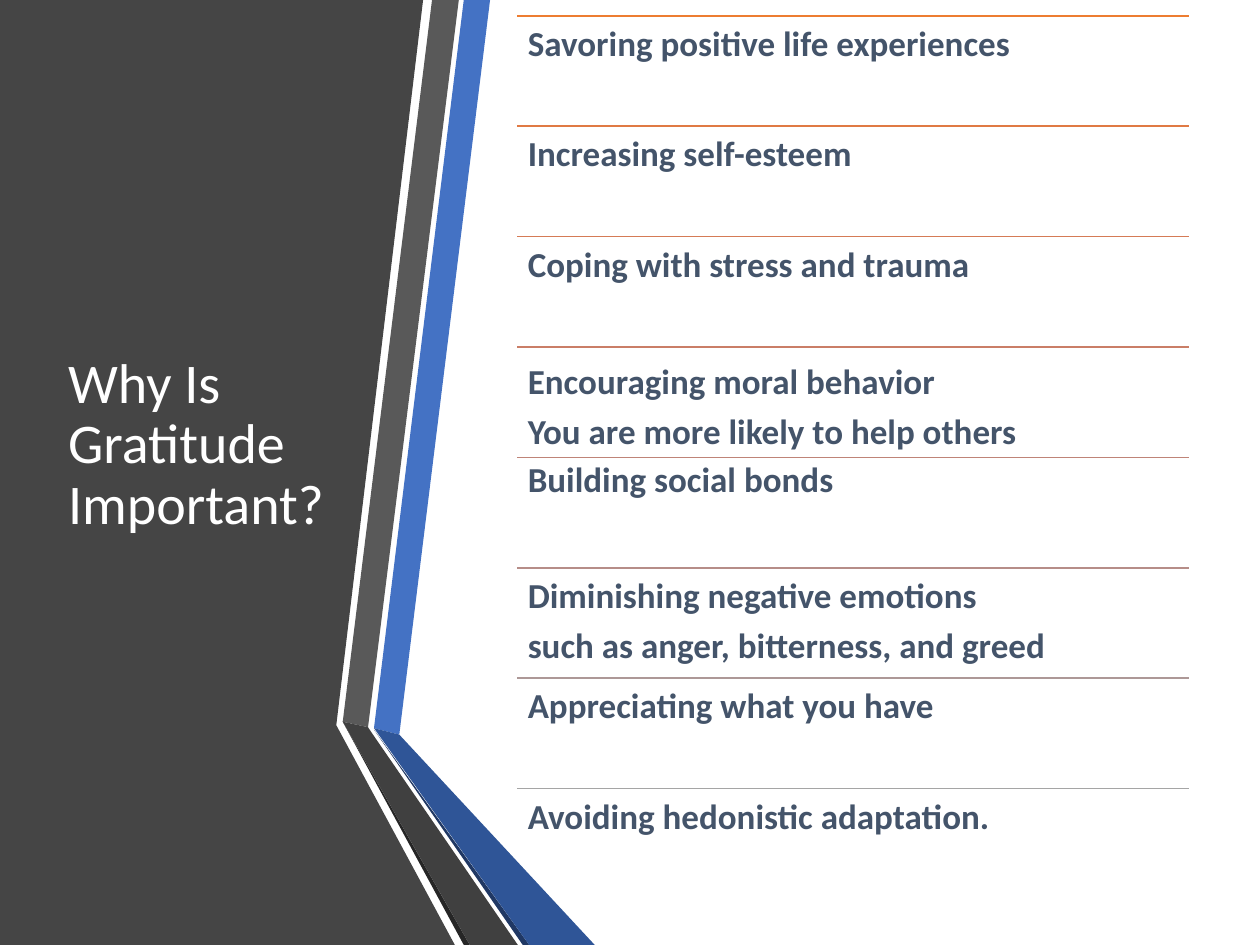
from lxml import etree
from pptx import Presentation
from pptx.dml.color import RGBColor
from pptx.enum.shapes import MSO_CONNECTOR
from pptx.enum.text import MSO_ANCHOR, MSO_AUTO_SIZE, PP_ALIGN
from pptx.oxml.ns import qn
from pptx.util import Cm, Pt

COLORS = {
    "white": "FFFFFF",
    "panel": "454545",
    "blue": "4472C4",
    "deep blue": "2F5597",
    "navy": "203864",
    "gray": "595959",
    "dark gray": "404040",
    "black": "262626",
    "text": "44546A",
}

BOTTOM = 19.05

RIBBONS = [
    ("panel", [(0, 0), (8.53, 0), (6.78, 14.62), (9.17, BOTTOM), (0, BOTTOM)]),
    ("blue", [(7.54, 14.68), (8.05, 14.81), (9.88, 0), (9.35, 0)]),
    ("gray", [(9.25, 0), (8.71, 0), (6.91, 14.55), (7.42, 14.66)]),
    ("black", [(6.91, 14.55), (9.35, BOTTOM), (9.47, BOTTOM)]),
    ("navy", [(7.54, 14.71), (10.54, BOTTOM), (10.67, BOTTOM)]),
    ("deep blue", [(7.54, 14.68), (10.67, BOTTOM), (11.99, BOTTOM), (8.05, 14.81)]),
    ("dark gray", [(10.44, BOTTOM), (7.52, 14.81), (7.42, 14.66), (6.91, 14.55), (9.47, BOTTOM)]),
]

BENEFITS = [
    ("ED7D31", 0, ["Savoring positive life experiences"]),
    ("E07A44", 0, ["Increasing self-esteem"]),
    ("D57B56", 0, ["Coping with stress and trauma"]),
    ("CA7E67", 0.13, ["Encouraging moral behavior", "You are more likely to help others"]),
    ("BF8478", -0.11, ["Building social bonds"]),
    ("B68D88", 0, ["Diminishing negative emotions", "such as anger, bitterness, and greed"]),
    ("AD9897", 0, ["Appreciating what you have"]),
    ("A5A5A5", 0, ["Avoiding hedonistic adaptation."]),
]

LIST_LEFT, LIST_TOP, LIST_WIDTH, ROW_HEIGHT = 10.43, 0.32, 13.53, 2.225


class SlideBuilder:
    font_name = "Calibri"
    title_size = Pt(32)
    text_size = Pt(20)
    text_inset = Cm(0.21)

    def __init__(self, slide):
        self.slide = slide

    def format_paragraph(self, paragraph, size, color, bold):
        paragraph.alignment = PP_ALIGN.LEFT
        paragraph.line_spacing = 0.9
        font = paragraph.font
        font.name, font.size, font.bold = self.font_name, size, bold
        font.color.rgb = RGBColor.from_string(color)

    def polygon(self, points, color):
        corners = [(Cm(x), Cm(y)) for x, y in points]
        builder = self.slide.shapes.build_freeform(*corners[0])
        builder.add_line_segments(corners[1:], close=True)
        shape = builder.convert_to_shape()
        shape.shadow.inherit = False
        shape.fill.solid()
        shape.fill.fore_color.rgb = RGBColor.from_string(color)
        shape.line.fill.background()

    def title(self, text, left, top, width, height):
        title = self.slide.shapes.title
        title.left, title.top, title.width, title.height = map(Cm, (left, top, width, height))
        frame = title.text_frame
        frame.text = text
        frame.word_wrap = True
        frame.auto_size = MSO_AUTO_SIZE.NONE
        frame.vertical_anchor = MSO_ANCHOR.MIDDLE
        self.format_paragraph(frame.paragraphs[0], self.title_size, COLORS["white"], False)
        self.slide.shapes._spTree.append(title._element)

    def rule(self, left, top, width, color):
        connector = self.slide.shapes.add_connector(
            MSO_CONNECTOR.STRAIGHT, Cm(left), Cm(top), Cm(left + width), Cm(top))
        connector.line.color.rgb = RGBColor.from_string(color)
        connector.line.width = Pt(1)
        etree.SubElement(connector._element.spPr, qn("a:effectLst"))

    def text(self, lines, left, top, width, height):
        box = self.slide.shapes.add_textbox(Cm(left), Cm(top), Cm(width), Cm(height))
        frame = box.text_frame
        frame.word_wrap = True
        frame.margin_left = frame.margin_right = self.text_inset
        frame.margin_top = frame.margin_bottom = self.text_inset
        frame.text = "\n".join(lines)
        for paragraph in frame.paragraphs:
            self.format_paragraph(paragraph, self.text_size, COLORS["text"], True)
            paragraph.space_after = Pt(7)


def main():
    presentation = Presentation()
    presentation.slide_width, presentation.slide_height = Cm(25.4), Cm(BOTTOM)
    builder = SlideBuilder(presentation.slides.add_slide(presentation.slide_layouts[5]))

    for color, points in RIBBONS:
        builder.polygon(points, COLORS[color])
    builder.title("Why Is Gratitude Important?", 1.12, 1.9, 5.79, 14.17)

    for row, (rule_color, text_shift, lines) in enumerate(BENEFITS):
        top = LIST_TOP + row * ROW_HEIGHT
        builder.rule(LIST_LEFT, top, LIST_WIDTH, rule_color)
        builder.text(lines, LIST_LEFT, top + text_shift, LIST_WIDTH, ROW_HEIGHT)

    presentation.save("out.pptx")


if __name__ == "__main__":
    main()
